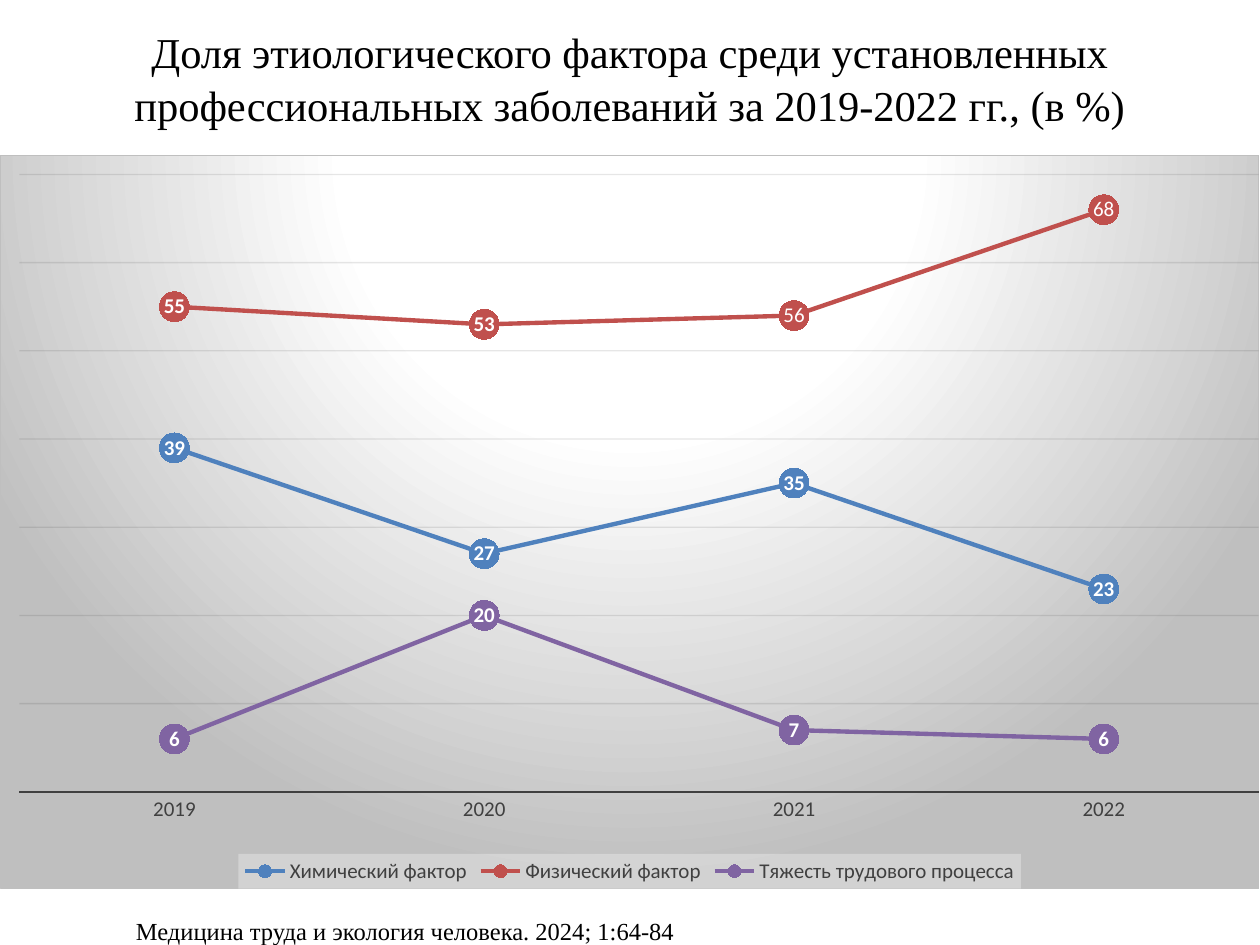
import dataclasses

import lxml.etree
import pptx
import pptx.chart.data
import pptx.dml.color
import pptx.enum.chart
import pptx.enum.text
import pptx.oxml
import pptx.oxml.ns
import pptx.util

Cm = pptx.util.Cm
Pt = pptx.util.Pt
NAMESPACES = pptx.oxml.ns.nsdecls("a", "c")


@dataclasses.dataclass(frozen=True)
class Theme:
    text_font: str = "Times New Roman"
    chart_font: str = "Calibri"
    ink: str = "000000"
    axis: str = "404040"
    grid: str = "0D0D0D"
    light: str = "FFFFFF"
    shade: str = "BFBFBF"
    legend: str = "F2F2F2"
    series: tuple = ("4F81BD", "C0504D", "8064A2")
    title_size: float = 24.3
    note_size: float = 14
    chart_size: float = 12
    marker_size: int = 17


def color(value):
    return pptx.dml.color.RGBColor.from_string(value)


def style_font(font, name, size, ink, bold=False):
    font.name = name
    font.size = Pt(size)
    font.bold = bold
    font.color.rgb = color(ink)


def write(frame, text, *, font, size, ink, align=None, spacing=None, after=None):
    para = frame.paragraphs[0]
    para.alignment = align
    para.line_spacing = spacing
    para.space_after = after
    span = para.add_run()
    span.text = text
    style_font(span.font, font, size, ink)


def style_line(line, ink, width):
    line.color.rgb = color(ink)
    line.width = Pt(width)


def set_alpha(element, percent):
    for node in element.iter(pptx.oxml.ns.qn("a:srgbClr")):
        lxml.etree.SubElement(node, pptx.oxml.ns.qn("a:alpha"), val=str(percent * 1000))


class SlideBuilder:
    def __init__(self, page, theme):
        self.page = page
        self.theme = theme

    def text(self, text, left, top, width, height, anchor=None, **style):
        box = self.page.shapes.add_textbox(Cm(left), Cm(top), Cm(width), Cm(height))
        frame = box.text_frame
        frame.word_wrap = True
        frame.vertical_anchor = anchor
        write(frame, text, font=self.theme.text_font, ink=self.theme.ink, **style)

    def line_chart(self, categories, rows, left, top, width, height):
        data = pptx.chart.data.CategoryChartData()
        data.categories = categories
        for name, values in rows.items():
            data.add_series(name, values)
        kind = pptx.enum.chart.XL_CHART_TYPE.LINE_MARKERS
        chart = self.page.shapes.add_chart(
            kind, Cm(left), Cm(top), Cm(width), Cm(height), data
        ).chart
        chart.has_title = False
        self.chart_font(chart.font, self.theme.axis)
        self.axes(chart)
        self.legend(chart)
        self.background(chart)
        self.plot_layout(chart, x=0.015, y=0.026, w=0.985, h=0.842)
        for series, ink in zip(chart.plots[0].series, self.theme.series):
            self.series(series, ink)
        return chart

    def chart_font(self, font, ink, bold=False):
        style_font(font, self.theme.chart_font, self.theme.chart_size, ink, bold)

    def axes(self, chart):
        no_tick = pptx.enum.chart.XL_TICK_MARK.NONE
        years = chart.category_axis
        years.major_tick_mark = no_tick
        style_line(years.format.line, self.theme.axis, 1.5)
        self.chart_font(years.tick_labels.font, self.theme.axis)
        shares = chart.value_axis
        shares.minimum_scale = 0
        shares.maximum_scale = 70
        shares.major_unit = 10
        shares.visible = False
        grid = shares.major_gridlines
        style_line(grid.format.line, self.theme.grid, 0.75)
        set_alpha(grid._xAx.find(pptx.oxml.ns.qn("c:majorGridlines")), 10)

    def legend(self, chart):
        chart.has_legend = True
        legend = chart.legend
        legend.position = pptx.enum.chart.XL_LEGEND_POSITION.BOTTOM
        legend.include_in_layout = False
        self.chart_font(legend.font, self.theme.axis)
        fill = pptx.oxml.parse_xml(
            f'<c:spPr {NAMESPACES}><a:solidFill><a:srgbClr val="{self.theme.legend}"/>'
            "</a:solidFill><a:ln><a:noFill/></a:ln></c:spPr>"
        )
        set_alpha(fill, 39)
        legend._element.find(pptx.oxml.ns.qn("c:txPr")).addprevious(fill)

    def background(self, chart):
        light, shade = self.theme.light, self.theme.shade
        stops = "".join(
            f'<a:gs pos="{position * 1000}"><a:srgbClr val="{ink}"/></a:gs>'
            for position, ink in ((0, light), (39, light), (100, shade))
        )
        fill = pptx.oxml.parse_xml(
            f'<c:spPr {NAMESPACES}><a:gradFill><a:gsLst>{stops}</a:gsLst>'
            '<a:path path="circle"><a:fillToRect l="50000" t="-80000" r="50000" b="180000"/>'
            f'</a:path></a:gradFill><a:ln w="{Pt(0.75)}"><a:solidFill>'
            f'<a:srgbClr val="{shade}"/></a:solidFill></a:ln></c:spPr>'
        )
        chart._chartSpace.find(pptx.oxml.ns.qn("c:txPr")).addprevious(fill)

    def plot_layout(self, chart, **bounds):
        plot = chart._chartSpace.chart.plotArea
        for old in plot.findall(pptx.oxml.ns.qn("c:layout")):
            plot.remove(old)
        modes = '<c:xMode val="edge"/><c:yMode val="edge"/>'
        sizes = "".join(f'<c:{key} val="{value}"/>' for key, value in bounds.items())
        plot.insert(0, pptx.oxml.parse_xml(
            f"<c:layout {NAMESPACES}><c:manualLayout>"
            f'<c:layoutTarget val="inner"/>{modes}{sizes}</c:manualLayout></c:layout>'
        ))

    def series(self, series, ink):
        series.smooth = False
        style_line(series.format.line, ink, 2.5)
        marker = series.marker
        marker.style = pptx.enum.chart.XL_MARKER_STYLE.CIRCLE
        marker.size = self.theme.marker_size
        marker.format.fill.solid()
        marker.format.fill.fore_color.rgb = color(ink)
        marker.format.line.fill.background()
        labels = series.data_labels
        labels.show_value = True
        labels.position = pptx.enum.chart.XL_LABEL_POSITION.CENTER
        self.chart_font(labels.font, self.theme.light, bold=True)

    def point_label(self, series, index, text):
        label = series.points[index].data_label
        write(label.text_frame, text, font=self.theme.chart_font,
              size=self.theme.chart_size, ink=self.theme.light)
        label.position = pptx.enum.chart.XL_LABEL_POSITION.CENTER


def main():
    deck = pptx.Presentation()
    deck.slide_width = Cm(25.4)
    deck.slide_height = Cm(19.05)
    theme = Theme()
    builder = SlideBuilder(deck.slides.add_slide(deck.slide_layouts[6]), theme)
    builder.text(
        "Доля этиологического фактора среди установленных "
        "профессиональных заболеваний за 2019-2022 гг., (в %)",
        1.27, 0.4, 22.86, 2.3, size=theme.title_size,
        anchor=pptx.enum.text.MSO_ANCHOR.MIDDLE,
        align=pptx.enum.text.PP_ALIGN.CENTER, spacing=1.05,
    )
    chart = builder.line_chart(
        ["2019", "2020", "2021", "2022"],
        {
            "Химический фактор": (39, 27, 35, 23),
            "Физический фактор": (55, 53, 54, 66),
            "Тяжесть трудового процесса": (6, 20, 7, 6),
        },
        0, 3.12, 25.4, 14.81,
    )
    physical = chart.plots[0].series[1]
    for index, text in ((2, "56"), (3, "68")):
        builder.point_label(physical, index, text)
    builder.text(
        "Медицина труда и экология человека. 2024; 1:64-84",
        2.49, 18.31, 21.59, 1.8, size=theme.note_size, spacing=1.07, after=Pt(8),
    )
    deck.save("out.pptx")


if __name__ == "__main__":
    main()
